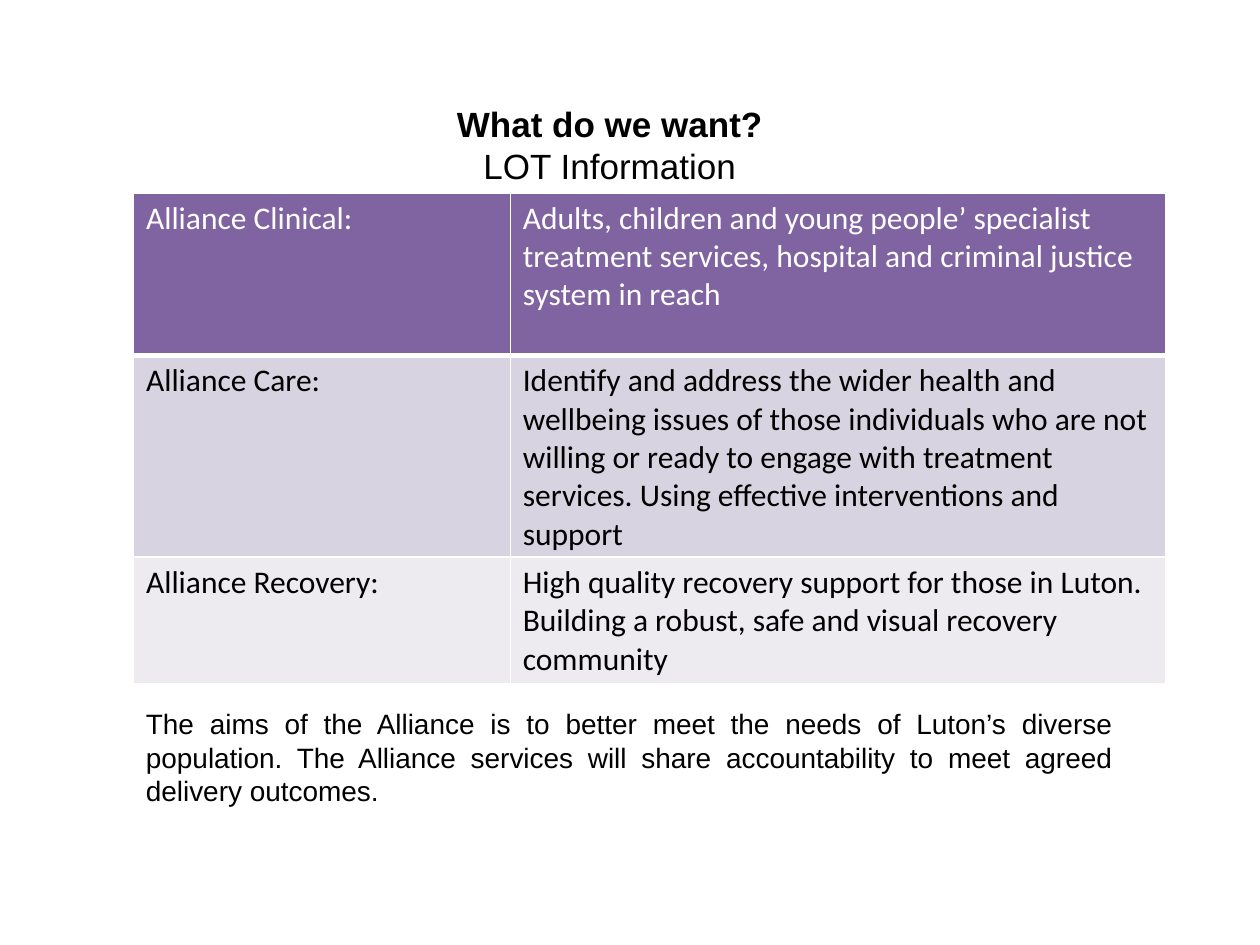
from lxml.etree import SubElement
from pptx import Presentation
from pptx.dml.color import RGBColor
from pptx.enum.text import MSO_ANCHOR, MSO_AUTO_SIZE, PP_ALIGN
from pptx.oxml.ns import qn
from pptx.util import Inches, Pt

TITLE = ["What do we want?", "LOT Information"]
LOTS = [
    ("Alliance Clinical:",
     "Adults, children and young people’ specialist treatment services, "
     "hospital and criminal justice system in reach"),
    ("Alliance Care:",
     "Identify and address the wider health and wellbeing issues of those "
     "individuals who are not willing or ready to engage with treatment "
     "services. Using effective interventions and support"),
    ("Alliance Recovery:",
     "High quality recovery support for those in Luton. Building a robust, "
     "safe and visual recovery community"),
]
AIMS = ("The aims of the Alliance is to better meet the needs of Luton’s diverse "
        "population. The Alliance services will share accountability to meet "
        "agreed delivery outcomes.")

THEME = {
    "text": "000000", "header_text": "FFFFFF", "border": "FFFFFF",
    "row_fills": ["8064A2", "D8D3E0", "EDEAF0"],
    "font": "Arial", "table_font": "Calibri",
    "title_size": 20, "table_size": 18, "aims_size": 16,
    "thin": 1, "thick": 3,
}
LEFT = 1.06
COL_WIDTHS = [2.99, 5.2]
ROW_HEIGHTS = [1.29, 1.6, 1.01]


def format_font(p, name, size, color, bold=False):
    for r in p.runs:
        r.font.name = name
        r.font.size = Pt(size)
        r.font.bold = bold
        r.font.color.rgb = RGBColor.from_string(color)


def place(sp, left, top, width, height):
    sp.left, sp.top = Inches(left), Inches(top)
    sp.width, sp.height = Inches(width), Inches(height)


def set_border(cell, side, width):
    ln = SubElement(cell._tc.get_or_add_tcPr(), qn(f"a:ln{side}"), w=str(Pt(width)))
    fill = SubElement(ln, qn("a:solidFill"))
    SubElement(fill, qn("a:srgbClr"), val=THEME["border"])


def add_title(slide):
    sp = slide.shapes.title
    place(sp, LEFT, 0.76, 7.56, 0.77)
    tf = sp.text_frame
    tf.text = "\n".join(TITLE)
    tf.vertical_anchor = MSO_ANCHOR.TOP
    tf.auto_size = MSO_AUTO_SIZE.SHAPE_TO_FIT_TEXT
    for i, p in enumerate(tf.paragraphs):
        p.alignment = PP_ALIGN.CENTER
        format_font(p, THEME["font"], THEME["title_size"], THEME["text"], i == 0)


def add_aims(slide):
    sp = slide.shapes.add_textbox(Inches(LEFT), Inches(5.56), Inches(7.87), Inches(0.91))
    tf = sp.text_frame
    tf.word_wrap = True
    tf.auto_size = MSO_AUTO_SIZE.SHAPE_TO_FIT_TEXT
    tf.text = AIMS
    p = tf.paragraphs[0]
    p.alignment = PP_ALIGN.JUSTIFY
    format_font(p, THEME["font"], THEME["aims_size"], THEME["text"])


def add_lots(slide):
    table = slide.shapes.add_table(
        len(LOTS), len(COL_WIDTHS), Inches(LEFT), Inches(1.53),
        Inches(sum(COL_WIDTHS)), Inches(sum(ROW_HEIGHTS))).table
    for col, width in zip(table.columns, COL_WIDTHS):
        col.width = Inches(width)
    for i, lot in enumerate(LOTS):
        table.rows[i].height = Inches(ROW_HEIGHTS[i])
        color = THEME["header_text"] if i == 0 else THEME["text"]
        edges = {"L": "thin", "R": "thin",
                 "T": "thick" if i == 1 else "thin",
                 "B": "thick" if i == 0 else "thin"}
        for j, text in enumerate(lot):
            cell = table.cell(i, j)
            cell.text = text
            format_font(cell.text_frame.paragraphs[0], THEME["table_font"],
                        THEME["table_size"], color)
            for side, weight in edges.items():
                set_border(cell, side, THEME[weight])
            cell.fill.solid()
            cell.fill.fore_color.rgb = RGBColor.from_string(THEME["row_fills"][i])


def main():
    prs = Presentation()
    prs.slide_width, prs.slide_height = Inches(10), Inches(7.5)
    slide = prs.slides.add_slide(prs.slide_layouts[5])
    add_title(slide)
    add_aims(slide)
    add_lots(slide)
    prs.save("out.pptx")


if __name__ == "__main__":
    main()
